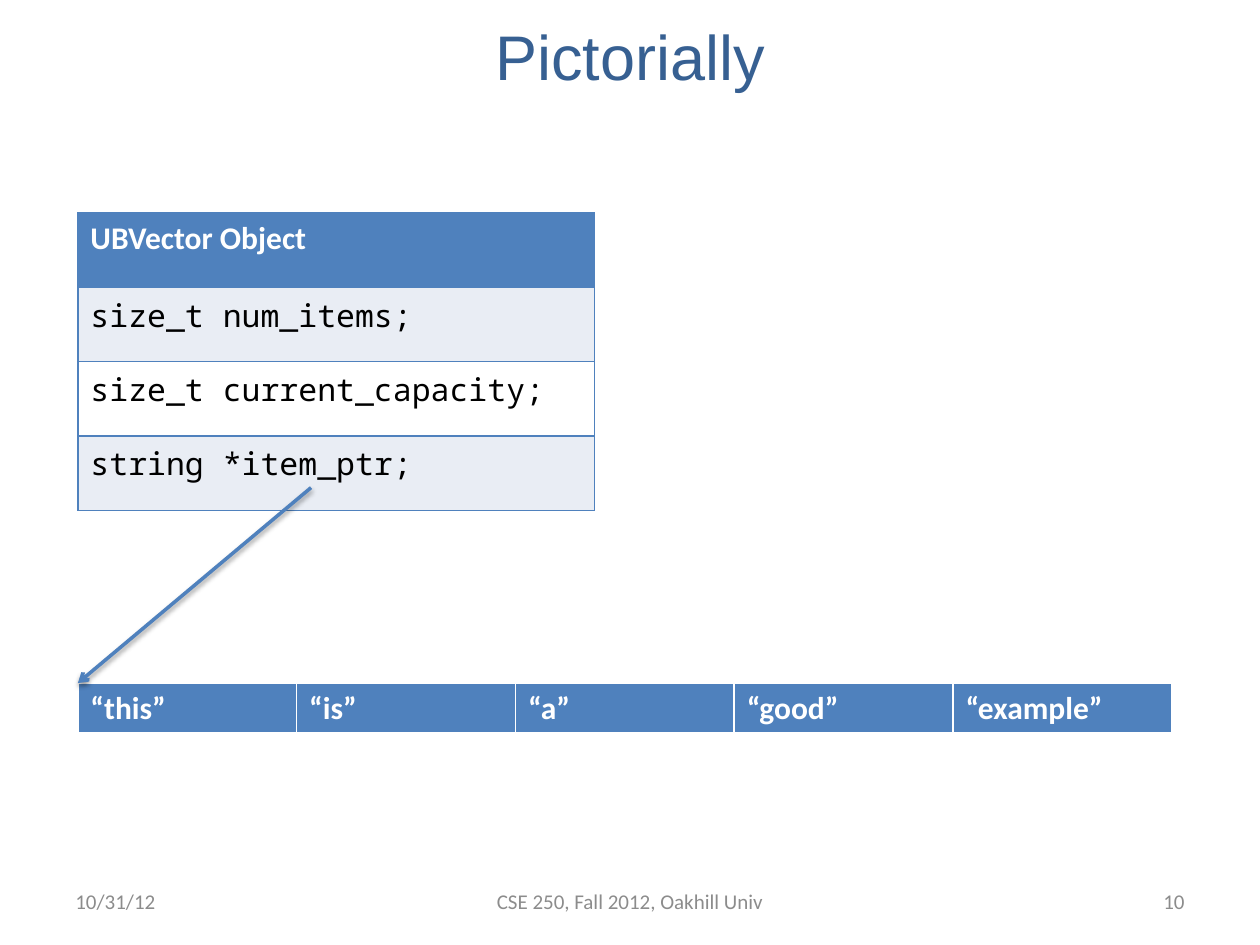
from lxml import etree
from pptx import Presentation
from pptx.dml.color import RGBColor
from pptx.enum.shapes import MSO_CONNECTOR
from pptx.enum.text import MSO_ANCHOR, PP_ALIGN
from pptx.oxml import parse_xml
from pptx.util import Cm, Pt

LEFT, MID, RIGHT = PP_ALIGN.LEFT, PP_ALIGN.CENTER, PP_ALIGN.RIGHT
CENTER = MSO_ANCHOR.MIDDLE
LINE = MSO_CONNECTOR.STRAIGHT
NS = "http://schemas.openxmlformats.org/drawingml/2006/main"
COLORS = {"title": "376092", "blue": "4F81BD", "band": "E9EDF4",
          "white": "FFFFFF", "black": "000000", "gray": "8C8C8C"}


def color(name):
    return RGBColor.from_string(COLORS[name])


def style(frame, size, font, ink, align=LEFT, bold=False):
    for par in frame.paragraphs:
        par.alignment = align
        for run in par.runs:
            run.font.size = Pt(size)
            run.font.name = font
            run.font.bold = bold
            run.font.color.rgb = color(ink)


def edge(cell, ink, widths):
    """Draw the left, right, top and bottom borders, in points."""
    props = cell._tc.get_or_add_tcPr()
    for i, (side, width) in enumerate(zip("LRTB", widths)):
        props.insert(i, parse_xml(
            f'<a:ln{side} xmlns:a="{NS}" w="{Pt(width)}"><a:solidFill>'
            f'<a:srgbClr val="{COLORS[ink]}"/></a:solidFill></a:ln{side}>'))


def fill_cell(cell, text, font, ink, back, line, widths, bold):
    cell.text = text
    style(cell.text_frame, 18, font, ink, bold=bold)
    cell.fill.solid()
    cell.fill.fore_color.rgb = color(back)
    edge(cell, line, widths)


def add_title(slide, box, text):
    title = slide.shapes.title
    title.left, title.top, title.width, title.height = map(Cm, box)
    title.text_frame.text = text
    title.text_frame.vertical_anchor = CENTER
    style(title.text_frame, 36, "Arial", "title", MID)


def add_object(slide, box, name, fields):
    rows = [name] + fields
    table = slide.shapes.add_table(len(rows), 1, *map(Cm, box)).table
    for i, text in enumerate(rows):
        head = i == 0
        fill_cell(table.cell(i, 0), text,
                  "Calibri" if head else "Noto Sans Mono",
                  "white" if head else "black",
                  "blue" if head else ("white", "band")[i % 2],
                  "blue", (1, 1, 1, 1), head)


def add_items(slide, box, items):
    table = slide.shapes.add_table(1, len(items), *map(Cm, box)).table
    for i, text in enumerate(items):
        fill_cell(table.cell(0, i), text, "Calibri", "white", "blue",
                  "white", (1, 1, 1, 3), True)


def add_arrow(slide, start, end):
    arrow = slide.shapes.add_connector(LINE, *map(Cm, start + end))
    arrow.line.color.rgb = color("blue")
    arrow.line.width = Pt(2)
    etree.SubElement(arrow.line._get_or_add_ln(), f"{{{NS}}}tailEnd",
                     type="arrow")
    # Soft shadow straight below the line
    arrow._element.spPr.append(parse_xml(
        f'<a:effectLst xmlns:a="{NS}"><a:outerShdw blurRad="{Pt(3.1)}" '
        f'dist="{Pt(1.6)}" dir="5400000" rotWithShape="0">'
        f'<a:srgbClr val="{COLORS["black"]}"><a:alpha val="38000"/>'
        '</a:srgbClr></a:outerShdw></a:effectLst>'))


def add_footer(slide, box, date, course, page):
    left, top, width, height = box
    side, main = 5.92, 10.54
    parts = ((date, 0, side, LEFT),
             (course, (width - main) / 2, main, MID),
             (page, width - side, side, RIGHT))
    for text, shift, wide, align in parts:
        label = slide.shapes.add_textbox(
            Cm(left + shift), Cm(top), Cm(wide), Cm(height))
        frame = label.text_frame
        frame.word_wrap = True
        frame.vertical_anchor = CENTER
        frame.text = text
        style(frame, 12, "Calibri", "gray", align)


def main():
    deck = Presentation()
    deck.slide_width, deck.slide_height = Cm(25.4), Cm(19.05)
    slide = deck.slides.add_slide(deck.slide_layouts[5])
    left, top = 1.57, 13.77

    add_title(slide, (0, 0.18, 25.4, 1.85), "Pictorially")
    # Vector object and the array it points to
    add_object(slide, (left, 4.29, 10.41, 6), "UBVector Object",
               ["size_t num_items;", "size_t current_capacity;",
                "string *item_ptr;"])
    add_items(slide, (left, top, 22.05, 1.03),
              ["“this”", "“is”", "“a”", "“good”", "“example”"])
    add_arrow(slide, (6.27, 9.83), (left, top))
    add_footer(slide, (1.27, 17.65, 22.86, 1.02), "10/31/12",
               "CSE 250, Fall 2012, Oakhill Univ", "10")
    deck.save("out.pptx")


if __name__ == "__main__":
    main()
